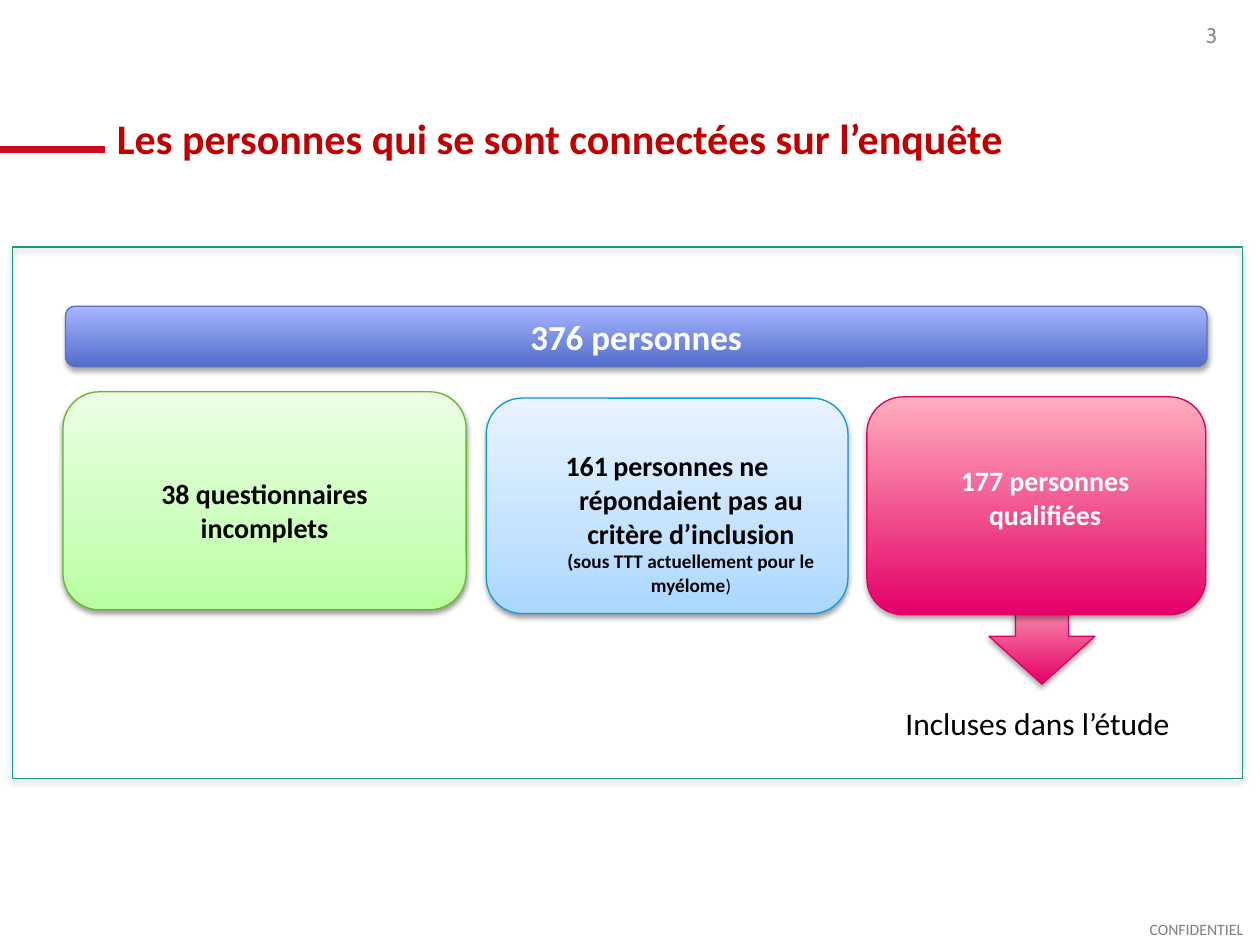
import copy

import lxml.etree
import pptx
import pptx.dml.color
import pptx.enum.shapes
import pptx.enum.text
import pptx.oxml
import pptx.oxml.ns
import pptx.util

Inches = pptx.util.Inches
Pt = pptx.util.Pt
qn = pptx.oxml.ns.qn
SHAPE = pptx.enum.shapes.MSO_SHAPE
ALIGN = pptx.enum.text.PP_ALIGN
ANCHOR = pptx.enum.text.MSO_ANCHOR


def color(value):
    return pptx.dml.color.RGBColor.from_string(value)


def write(shape, text, size=16, fill="000000", bold=False, font="Calibri",
          align=ALIGN.CENTER, anchor=ANCHOR.TOP, top=0.05, wrap=True, joined=False):
    frame = shape.text_frame
    frame.word_wrap = wrap
    frame.vertical_anchor = anchor
    frame.margin_top = Inches(top)
    paragraph = frame.paragraphs[-1]
    if paragraph.runs and not joined:
        paragraph = frame.add_paragraph()
    paragraph.alignment = align
    run = paragraph.add_run()
    run.text = text
    run.font.size = Pt(size)
    run.font.bold = bold
    run.font.name = font
    run.font.color.rgb = color(fill)
    return paragraph


presentation = pptx.Presentation()
presentation.slide_width = Inches(10)
presentation.slide_height = Inches(7.5)
slide = presentation.slides.add_slide(presentation.slide_layouts[6])

accent = slide.shapes.add_connector(
    pptx.enum.shapes.MSO_CONNECTOR.STRAIGHT,
    Inches(0.83), Inches(1.19), Inches(0), Inches(1.19))
accent.line.color.rgb = color("CD0920")
accent.line.width = Pt(4)
lxml.etree.SubElement(accent._element.spPr, qn("a:effectLst"))

pink = [(0, "E40067"), (1, "FFAFBE")]
green = [(0, "B7FF9F"), (0.35, "CBFFBB"), (1, "EBFFE5")]
blue = [(0, "A9D7FF"), (0.35, "C2E2FF"), (1, "E8F4FF")]
indigo = [(0, "526DCB"), (1, "A7B6FF")]

strong = (35, 1.8)
soft = (38, 1.6)
panels = [
    ("arrow", SHAPE.DOWN_ARROW, (7.85, 4.67, 0.84, 0.76), pink, "DF0065", strong),
    ("incomplete", SHAPE.ROUNDED_RECTANGLE, (0.5, 3.11, 3.2, 1.73), green, "63BA25", soft),
    ("excluded", SHAPE.ROUNDED_RECTANGLE, (3.86, 3.16, 2.87, 1.71), blue, "0E9CD4", soft),
    ("total", SHAPE.ROUNDED_RECTANGLE, (0.52, 2.43, 9.06, 0.48), indigo, "5C71BB", strong),
    ("qualified", SHAPE.ROUNDED_RECTANGLE, (6.88, 3.15, 2.69, 1.73), pink, "DF0065", strong),
    ("frame", SHAPE.RECTANGLE, (0.1, 1.96, 9.76, 4.22), None, "199B82", strong),
]
shapes = {}
for name, kind, box, stops, outline, (opacity, distance) in panels:
    shape = slide.shapes.add_shape(kind, *map(Inches, box))
    shapes[name] = shape
    shape.line.color.rgb = color(outline)
    shape.line.width = Pt(0.75)
    if stops:
        shape.fill.gradient()
        shape.fill.gradient_angle = 90
        stop_list = shape._element.spPr.find(qn("a:gradFill")).find(qn("a:gsLst"))
        while len(stop_list) < len(stops):
            stop_list.append(copy.deepcopy(stop_list[0]))
        for stop, (position, shade) in zip(shape.fill.gradient_stops, stops):
            stop.position = position
            stop.color.rgb = color(shade)
    else:
        shape.fill.background()
    shape.shadow.inherit = False
    effects = shape._element.spPr.find(qn("a:effectLst"))
    shadow = lxml.etree.SubElement(
        effects, qn("a:outerShdw"), blurRad=str(Pt(3.1)), dist=str(Pt(distance)),
        dir="5400000", rotWithShape="0")
    shade = lxml.etree.SubElement(shadow, qn("a:srgbClr"), val="000000")
    lxml.etree.SubElement(shade, qn("a:alpha"), val=str(opacity * 1000))

write(shapes["incomplete"], "38 questionnaires", bold=True, top=0.59)
write(shapes["incomplete"], "incomplets", bold=True, top=0.59)

criterion = write(shapes["excluded"], "personnes ne répondaient pas au critère d’inclusion",
                  bold=True, top=0.32)
properties = criterion._p.get_or_add_pPr()
properties.set("marL", str(Inches(0.38)))
properties.set("indent", str(Inches(-0.38)))
lxml.etree.SubElement(properties, qn("a:buAutoNum"), type="arabicPlain", startAt="161")
criterion.add_line_break()
write(shapes["excluded"], "(sous TTT actuellement pour le myélome",
      size=11, bold=True, top=0.32, joined=True)
write(shapes["excluded"], ")", size=10.5, top=0.32, joined=True)

write(shapes["total"], "376 personnes", size=20, fill="FFFFFF", bold=True, anchor=ANCHOR.MIDDLE)

labels = [
    ((9.02, 7.25, 0.95, 0.25), "CONFIDENTIEL",
     dict(size=9, fill="808080", anchor=ANCHOR.MIDDLE, wrap=False)),
    ((7.43, 0.08, 2.33, 0.4), "3",
     dict(size=12, fill="8C8C8C", font="Cabin", align=ALIGN.RIGHT, anchor=ANCHOR.MIDDLE)),
    ((0.83, 0.54, 8.93, 0.8), "Les personnes qui se sont connectées sur l’enquête",
     dict(size=24, fill="C00000", bold=True, align=ALIGN.LEFT, anchor=ANCHOR.BOTTOM)),
    ((7.05, 5.54, 2.37, 0.4), "Incluses dans l’étude", dict(size=18)),
    ((7.11, 3.63, 2.37, 0.64), "177 personnes qualifiées", dict(fill="FFFFFF", bold=True)),
]
for box, text, style in labels:
    write(slide.shapes.add_textbox(*map(Inches, box)), text, **style)

presentation.save("out.pptx")
